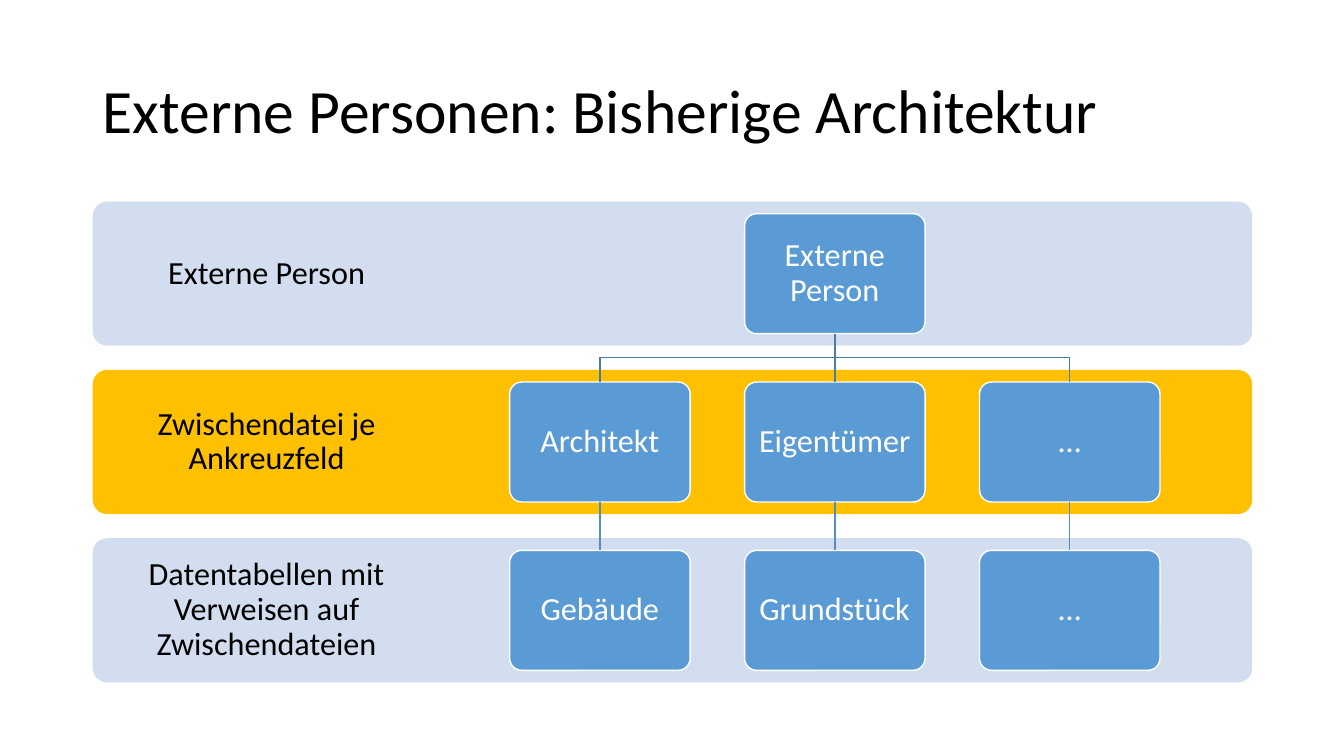
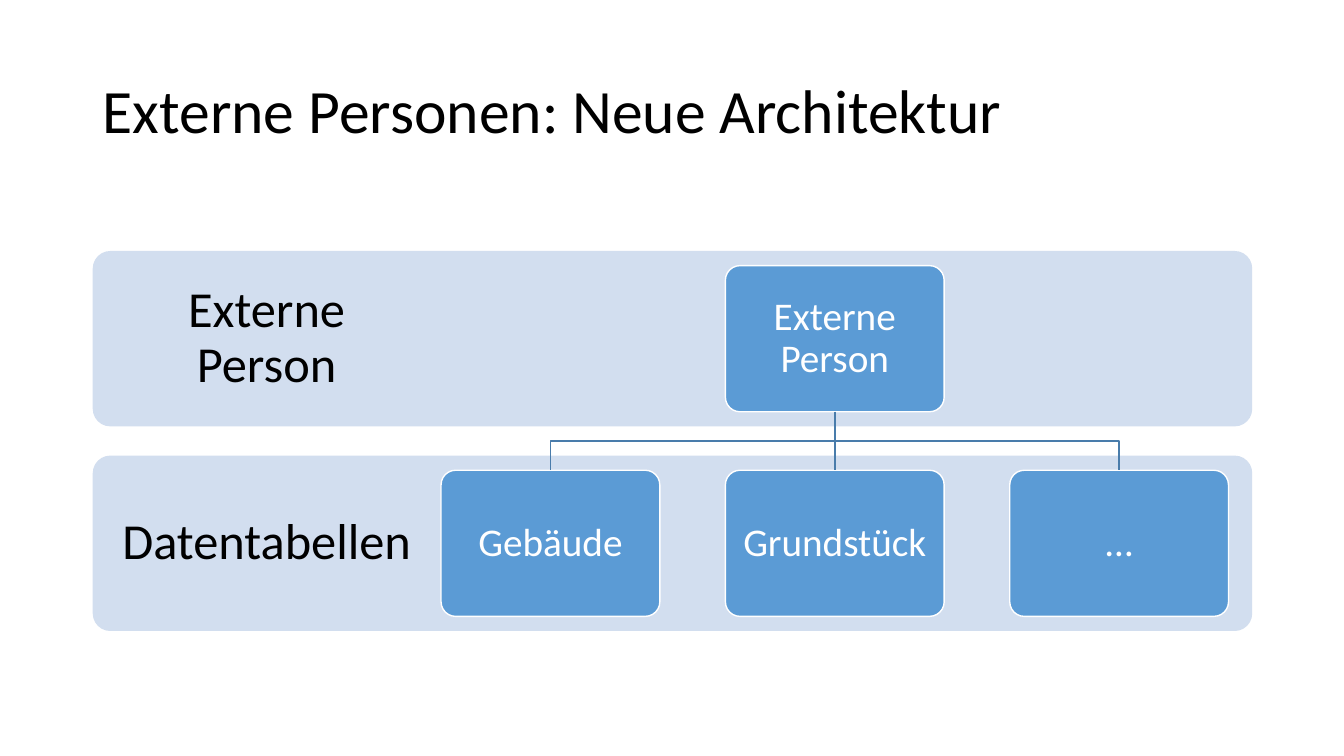
"""Build two slides comparing the old and new architecture for external persons."""
from dataclasses import dataclass

from lxml.etree import SubElement
from pptx import Presentation
from pptx.dml.color import RGBColor
from pptx.enum.shapes import MSO_CONNECTOR, MSO_SHAPE
from pptx.enum.text import MSO_ANCHOR, PP_ALIGN
from pptx.oxml.ns import qn
from pptx.util import Inches, Pt


@dataclass(frozen=True)
class Theme:
    font: str = "Calibri"
    title_size: int = 44
    text: str = "000000"
    box_text: str = "FFFFFF"
    box_fill: str = "5B9BD5"
    box_line: str = "FFFFFF"
    band: str = "D2DEEF"
    highlight: str = "FFC000"
    level_lines: tuple = ("497CAB", "538DC1")
    line_width: int = 1
    corner: float = 0.1


@dataclass(frozen=True)
class Grid:
    top: float
    row_pitch: float
    band_height: float
    box_width: float
    box_height: float
    column_pitch: float
    label_size: int
    label_inset: float
    box_size: int
    box_inset: float


THEME = Theme()
LEFT, WIDTH, LABEL_WIDTH = 0.92, 11.5, 3.45
TREE_CENTER = 8.28

SLIDES = [
    {
        "title": "Externe Personen: Bisherige Architektur",
        "grid": Grid(2, 1.67, 1.43, 1.79, 1.19, 2.33, 23, 0.18, 23, 0.1),
        "rows": [
            ("Externe Person", THEME.band, ["Externe Person"]),
            ("Zwischendatei je Ankreuzfeld", THEME.highlight,
             ["Architekt", "Eigentümer", "…"]),
            ("Datentabellen mit Verweisen auf Zwischendateien", THEME.band,
             ["Gebäude", "Grundstück", "…"]),
        ],
    },
    {
        "title": "Externe Personen: Neue Architektur",
        "grid": Grid(2.49, 2.03, 1.74, 2.17, 1.45, 2.82, 36, 0.28, 28, 0.12),
        "rows": [
            ("Externe Person", THEME.band, ["Externe Person"]),
            ("Datentabellen", THEME.band, ["Gebäude", "Grundstück", "…"]),
        ],
    },
]


def write(shape, text, size, color, align=PP_ALIGN.CENTER, inset=None):
    frame = shape.text_frame
    frame.word_wrap = True
    frame.vertical_anchor = MSO_ANCHOR.MIDDLE
    if inset is not None:
        frame.margin_left = frame.margin_right = Inches(inset)
        frame.margin_top = frame.margin_bottom = Inches(inset)
    frame.text = text
    paragraph = frame.paragraphs[0]
    paragraph.alignment = align
    paragraph.line_spacing = 0.9
    font = paragraph.runs[0].font
    font.name, font.size = THEME.font, Pt(size)
    font.color.rgb = RGBColor.from_string(color)


def add_text(slide, place, *style, **options):
    write(slide.shapes.add_textbox(*map(Inches, place)), *style, **options)


def style_line(shape, color):
    shape.line.color.rgb = RGBColor.from_string(color)
    shape.line.width = Pt(THEME.line_width)


def add_rounded(slide, place, fill, line=None):
    shape = slide.shapes.add_shape(MSO_SHAPE.ROUNDED_RECTANGLE, *map(Inches, place))
    shape.adjustments[0] = THEME.corner
    shape.shadow.inherit = False
    shape.fill.solid()
    shape.fill.fore_color.rgb = RGBColor.from_string(fill)
    if line:
        style_line(shape, line)
    else:
        shape.line.fill.background()
    return shape


def add_band(slide, grid, top, label, fill):
    add_rounded(slide, (LEFT, top, WIDTH, grid.band_height), fill)
    add_text(slide, (LEFT, top, LABEL_WIDTH, grid.band_height), label,
             grid.label_size, THEME.text, inset=grid.label_inset)


def add_boxes(slide, grid, band_top, names):
    top = band_top + (grid.band_height - grid.box_height) / 2
    boxes = []
    for column, name in enumerate(names):
        center = TREE_CENTER + (column - (len(names) - 1) / 2) * grid.column_pitch
        place = (center - grid.box_width / 2, top, grid.box_width, grid.box_height)
        box = add_rounded(slide, place, THEME.box_fill, THEME.box_line)
        write(box, name, grid.box_size, THEME.box_text, inset=grid.box_inset)
        boxes.append(box)
    return boxes


def add_straight(slide, parent, child):
    line = slide.shapes.add_connector(MSO_CONNECTOR.STRAIGHT, 0, 0, 0, 0)
    line.begin_connect(parent, 2)
    line.end_connect(child, 0)
    SubElement(line._element.spPr, qn("a:effectLst"))
    return line


def add_elbow(slide, parent, child):
    start_x = parent.left + parent.width // 2
    end_x = child.left + child.width // 2
    start_y, end_y = parent.top + parent.height, child.top
    middle_y = (start_y + end_y) // 2
    builder = slide.shapes.build_freeform(start_x, start_y)
    builder.add_line_segments(
        [(start_x, middle_y), (end_x, middle_y), (end_x, end_y)], close=False)
    elbow = builder.convert_to_shape()
    elbow.fill.background()
    elbow.shadow.inherit = False
    return elbow


def link_levels(slide, parents, children, color):
    if len(parents) == 1:
        parents = parents * len(children)
    for parent, child in zip(parents, children):
        offset = abs(parent.left - child.left)
        draw = add_straight if offset < Inches(0.01) else add_elbow
        style_line(draw(slide, parent, child), color)


def add_architecture(presentation, title, grid, rows):
    slide = presentation.slides.add_slide(presentation.slide_layouts[6])
    add_text(slide, (LEFT, 0.4, WIDTH, 1.45), title, THEME.title_size,
             THEME.text, align=PP_ALIGN.LEFT)
    tops = [grid.top + index * grid.row_pitch for index in range(len(rows))]
    for top, (label, fill, _) in zip(tops, rows):
        add_band(slide, grid, top, label, fill)
    levels = [add_boxes(slide, grid, top, names)
              for top, (_, _, names) in zip(tops, rows)]
    for parents, children, color in zip(levels, levels[1:], THEME.level_lines):
        link_levels(slide, parents, children, color)


def main():
    presentation = Presentation()
    presentation.slide_width = Inches(13.33)
    presentation.slide_height = Inches(7.5)
    for content in SLIDES:
        add_architecture(presentation, **content)
    presentation.save("out.pptx")


if __name__ == "__main__":
    main()
